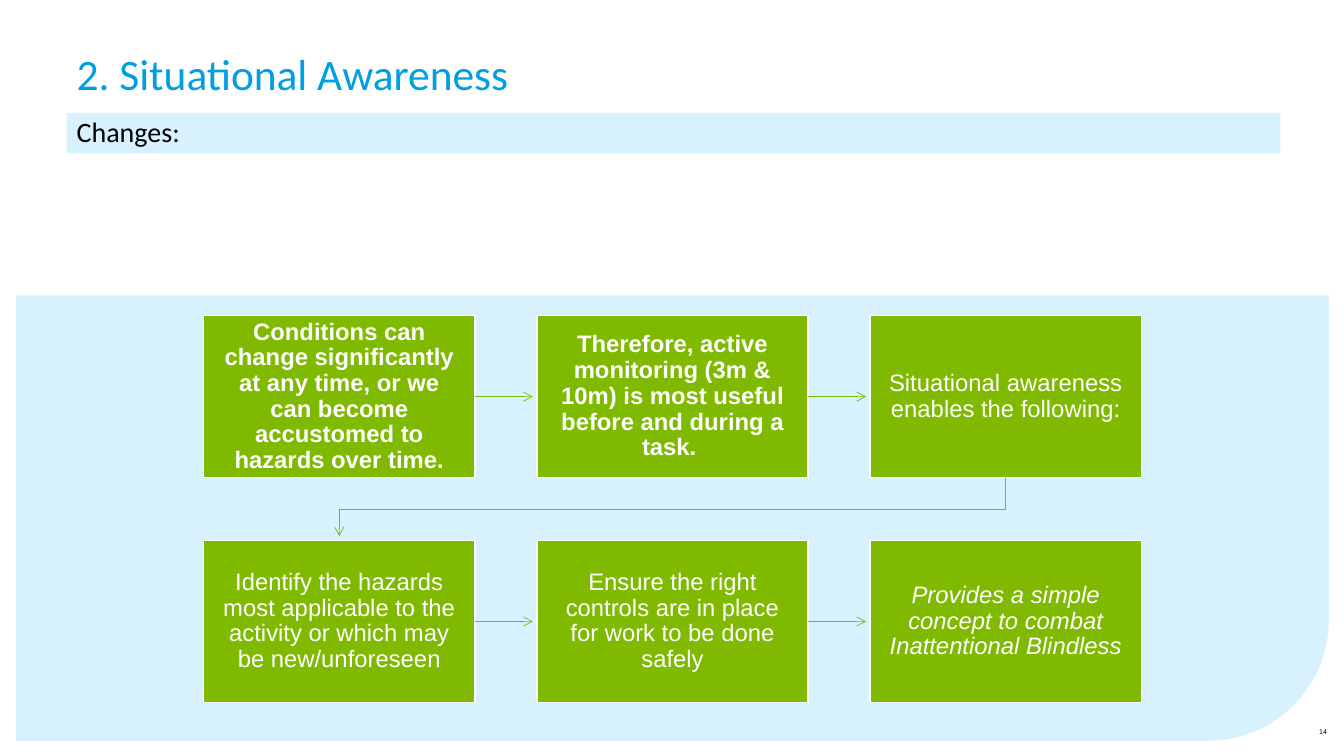
from dataclasses import dataclass

from lxml import etree
from pptx import Presentation
from pptx.dml.color import RGBColor
from pptx.enum.shapes import MSO_CONNECTOR, MSO_SHAPE
from pptx.enum.text import MSO_ANCHOR, MSO_AUTO_SIZE, PP_ALIGN
from pptx.oxml.ns import qn
from pptx.util import Inches, Pt

RECT, ROUND = MSO_SHAPE.RECTANGLE, MSO_SHAPE.ROUND_1_RECTANGLE
STRAIGHT = MSO_CONNECTOR.STRAIGHT
LEFT, CENTER, RIGHT = PP_ALIGN.LEFT, PP_ALIGN.CENTER, PP_ALIGN.RIGHT
TOP, MIDDLE = MSO_ANCHOR.TOP, MSO_ANCHOR.MIDDLE
FIXED = MSO_AUTO_SIZE.NONE

COLORS = {"sky": "D8F1FF", "blue": "009FDF", "green": "7FBA00",
          "white": "FFFFFF", "black": "000000"}

# Grid of steps, in inches
COLS = 3
GRID_X, GRID_Y = 2.02, 3.13
BOX_W, BOX_H = 2.69, 1.61
STEP_X = (8.63 - GRID_X) / (COLS - 1)
STEP_Y = 2.23
GAP = 0.04  # between an arrow tip and the next box


@dataclass
class Step:
    text: str
    bold: bool = False
    italic: bool = False


STEPS = [
    Step("Conditions can change significantly at any time, or we can become "
         "accustomed to hazards over time.", bold=True),
    Step("Therefore, active monitoring (3m & 10m) is most useful before and "
         "during a task. ", bold=True),
    Step("Situational awareness enables the following:"),
    Step("Identify the hazards most applicable to the activity or which may "
         "be new/unforeseen"),
    Step("Ensure the right controls are in place for work to be done safely"),
    Step("Provides a simple concept to combat Inattentional Blindless",
         italic=True),
]


def rgb(name: str) -> RGBColor:
    return RGBColor.from_string(COLORS[name])


def place(shape, x: float, y: float, w: float, h: float) -> None:
    shape.left, shape.top = Inches(x), Inches(y)
    shape.width, shape.height = Inches(w), Inches(h)


def paint(shape, fill: str) -> None:
    shape.fill.solid()
    shape.fill.fore_color.rgb = rgb(fill)


def add_box(slide, kind, x: float, y: float, w: float, h: float, fill: str):
    box = slide.shapes.add_shape(kind, *map(Inches, (x, y, w, h)))
    box.shadow.inherit = False
    paint(box, fill)
    box.line.fill.background()
    return box


def write(shape, text: str, size: float, color: str, face: str = "Arial",
          align=LEFT, anchor=MIDDLE, bold: bool = False,
          italic: bool = False) -> None:
    frame = shape.text_frame
    frame.word_wrap, frame.auto_size = True, FIXED
    frame.vertical_anchor = anchor
    frame.text = text
    para = frame.paragraphs[0]
    props = para._p.get_or_add_pPr()
    props.set("marL", "0")
    props.set("indent", "0")
    etree.SubElement(props, qn("a:buNone"))
    para.alignment, para.line_spacing = align, 0.9
    para.space_before = Pt(0)
    font = para.font
    font.name, font.size, font.color.rgb = face, Pt(size), rgb(color)
    font.bold, font.italic = bold, italic


def add_head(shape) -> None:
    shape.line.color.rgb = rgb("green")
    shape.line.width = Pt(0.5)
    line = shape.element.spPr.get_or_add_ln()
    etree.SubElement(line, qn("a:tailEnd"), type="arrow")


def spot(index: int) -> tuple[float, float]:
    row, col = divmod(index, COLS)
    return GRID_X + col * STEP_X, GRID_Y + row * STEP_Y


def add_step(slide, index: int, step: Step):
    box = add_box(slide, RECT, *spot(index), BOX_W, BOX_H, "green")
    box.line.color.rgb, box.line.width = rgb("white"), Pt(1)
    write(box, step.text, 17, "white", align=CENTER,
          bold=step.bold, italic=step.italic)
    frame = box.text_frame
    frame.margin_left = frame.margin_right = Inches(0.13)
    frame.margin_top = frame.margin_bottom = Inches(0.14)
    return box


def add_arrow(slide, index: int, box) -> None:
    x, y = spot(index)
    mid = Inches(y + BOX_H / 2)
    link = slide.shapes.add_connector(
        STRAIGHT, Inches(x + BOX_W), mid, Inches(x + STEP_X - GAP), mid)
    link.begin_connect(box, 3)
    add_head(link)
    etree.SubElement(link.element.spPr, qn("a:effectLst"))


def add_turn(slide, index: int) -> None:
    x, y = spot(index)
    next_x, low = spot(index + 1)
    start, end = Inches(x + BOX_W / 2), Inches(next_x + BOX_W / 2)
    base, tip = Inches(y + BOX_H), Inches(low - GAP)
    bend = Inches((y + BOX_H + low) / 2)
    route = slide.shapes.build_freeform(start, base)
    route.add_line_segments(
        [(start, bend), (end, bend), (end, tip)], close=False)
    turn = route.convert_to_shape()
    turn.shadow.inherit = False
    turn.fill.background()
    add_head(turn)


def main() -> None:
    deck = Presentation()
    deck.slide_width, deck.slide_height = Inches(13.33), Inches(7.5)
    slide = deck.slides.add_slide(deck.slide_layouts[1])
    title, body = slide.placeholders

    # Backdrop, behind the placeholders
    panel = add_box(slide, ROUND, 0.16, 0.15, 13.02, 7.2, "sky")
    panel.element.spPr.xfrm.set("flipV", "1")
    cover = add_box(slide, RECT, 0.16, 0.15, 13.02, 2.78, "white")
    for shape in (panel, cover):
        title.element.addprevious(shape.element)

    # Title, subtitle bar and page number
    place(title, 0.66, 0.47, 5.6, 0.57)
    write(title, "2. Situational Awareness", 31, "blue", "Calibri")
    place(body, 0.66, 1.12, 12.04, 0.4)
    paint(body, "sky")
    write(body, "Changes:", 20, "black", "Calibri", anchor=TOP)
    page = slide.shapes.add_textbox(
        *map(Inches, (12.79, 7.17, 0.47, 0.18)))
    write(page, "14", 5, "black", align=RIGHT)

    # Steps, with arrows along each row and a turn between rows
    for index, step in enumerate(STEPS):
        box = add_step(slide, index, step)
        if (index + 1) % COLS:
            add_arrow(slide, index, box)
        elif index + 1 < len(STEPS):
            add_turn(slide, index)

    deck.save("out.pptx")


if __name__ == "__main__":
    main()
